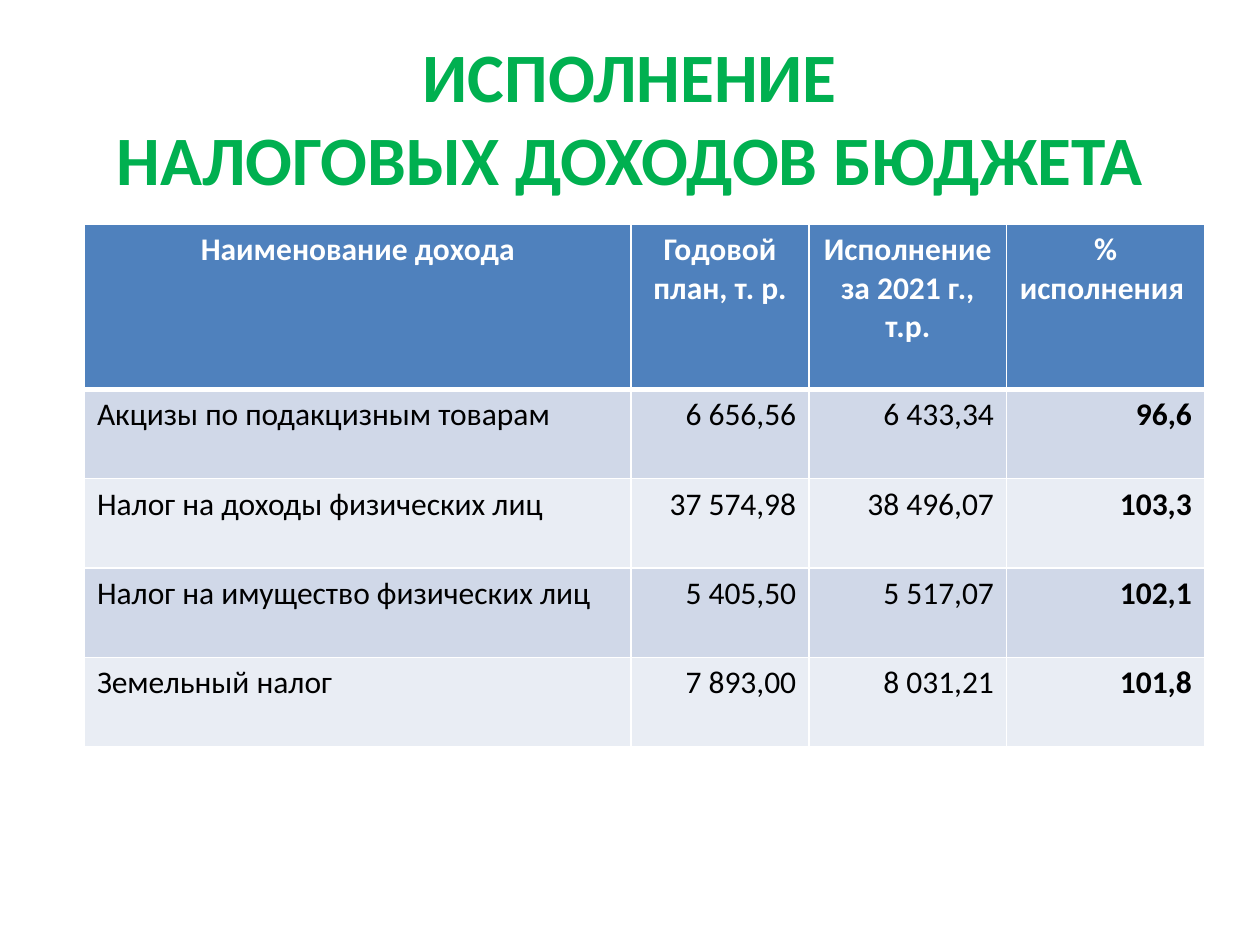
import pptx
import pptx.dml.color
import pptx.enum.text
import pptx.oxml
import pptx.oxml.ns
import pptx.util

Inches = pptx.util.Inches
Pt = pptx.util.Pt
RGBColor = pptx.dml.color.RGBColor
Align = pptx.enum.text.PP_ALIGN
Anchor = pptx.enum.text.MSO_ANCHOR

GREEN = RGBColor(0x00, 0xB0, 0x50)
BLUE = RGBColor(0x4F, 0x81, 0xBD)
BAND_DARK = RGBColor(0xD0, 0xD8, 0xE8)
BAND_LIGHT = RGBColor(0xE9, 0xED, 0xF4)
WHITE = RGBColor(0xFF, 0xFF, 0xFF)
BLACK = RGBColor(0x00, 0x00, 0x00)

TITLE = "ИСПОЛНЕНИЕ\vНАЛОГОВЫХ ДОХОДОВ БЮДЖЕТА"
HEADINGS = ["Наименование дохода", "Годовой план, т. р.",
            "Исполнение за 2021 г., т.р.", "% исполнения "]
INCOMES = [
    ["Акцизы по подакцизным товарам", "6 656,56", "6 433,34", "96,6"],
    ["Налог на доходы физических лиц", "37 574,98", "38 496,07", "103,3"],
    ["Налог на имущество физических лиц", "5 405,50", "5 517,07", "102,1"],
    ["Земельный налог", "7 893,00", "8 031,21", "101,8"],
]
COLUMN_WIDTHS = [4.34, 1.41, 1.57, 1.57]
HEADER_HEIGHT, INCOME_HEIGHT = 1.31, 0.71


class BudgetSlide:
    """Holds the style and the current slide."""

    font = "Calibri"
    title_size = Pt(39.6)
    table_size = Pt(18)

    def __init__(self, deck):
        self.slide = deck.slides.add_slide(deck.slide_layouts[5])

    def format_text(self, frame, size, color, bold, align):
        for paragraph in frame.paragraphs:
            paragraph.alignment = align
            for run in paragraph.runs:
                run.font.name = self.font
                run.font.size = size
                run.font.bold = bold
                run.font.color.rgb = color

    def title(self, text, left, top, width, height):
        heading = self.slide.shapes.title
        heading.left, heading.top = Inches(left), Inches(top)
        heading.width, heading.height = Inches(width), Inches(height)
        frame = heading.text_frame
        frame.text = text
        frame.word_wrap = True
        frame.vertical_anchor = Anchor.MIDDLE
        self.format_text(frame, self.title_size, GREEN, True, Align.CENTER)

    def borders(self, cell, bottom, top):
        properties = cell._tc.get_or_add_tcPr()
        namespace = pptx.oxml.ns.nsdecls("a")
        for side, points in (("L", 1), ("R", 1), ("T", top), ("B", bottom)):
            properties.append(pptx.oxml.parse_xml(
                f'<a:ln{side} {namespace} w="{Pt(points)}"><a:solidFill>'
                f'<a:srgbClr val="{WHITE}"/></a:solidFill></a:ln{side}>'))

    def table(self, rows, left, top, widths, heights):
        grid = self.slide.shapes.add_table(
            len(rows), len(widths), Inches(left), Inches(top),
            Inches(sum(widths)), Inches(sum(heights))).table
        for column, width in zip(grid.columns, widths):
            column.width = Inches(width)
        for r, (values, height) in enumerate(zip(rows, heights)):
            grid.rows[r].height = Inches(height)
            for c, value in enumerate(values):
                self.cell(grid.cell(r, c), value, r, c, c == len(widths) - 1)

    def cell(self, cell, value, row, column, is_last):
        cell.text_frame.text = value
        # The header has a thick rule below it
        self.borders(cell, bottom=3 if row == 0 else 1, top=3 if row == 1 else 1)
        if row == 0:
            fill, color, align = BLUE, WHITE, Align.CENTER
        else:
            fill = BAND_DARK if row % 2 else BAND_LIGHT
            color = BLACK
            align = Align.RIGHT if column else Align.LEFT
        cell.fill.solid()
        cell.fill.fore_color.rgb = fill
        self.format_text(cell.text_frame, self.table_size, color,
                         row == 0 or is_last, align)


def main():
    deck = pptx.Presentation()
    deck.slide_width, deck.slide_height = Inches(10), Inches(7.5)
    budget = BudgetSlide(deck)

    # Title
    budget.title(TITLE, 0.5, 0.3, 9, 1.25)

    # Tax income table
    heights = [HEADER_HEIGHT] + [INCOME_HEIGHT] * len(INCOMES)
    budget.table([HEADINGS] + INCOMES, 0.67, 1.78, COLUMN_WIDTHS, heights)

    deck.save("out.pptx")


if __name__ == "__main__":
    main()
